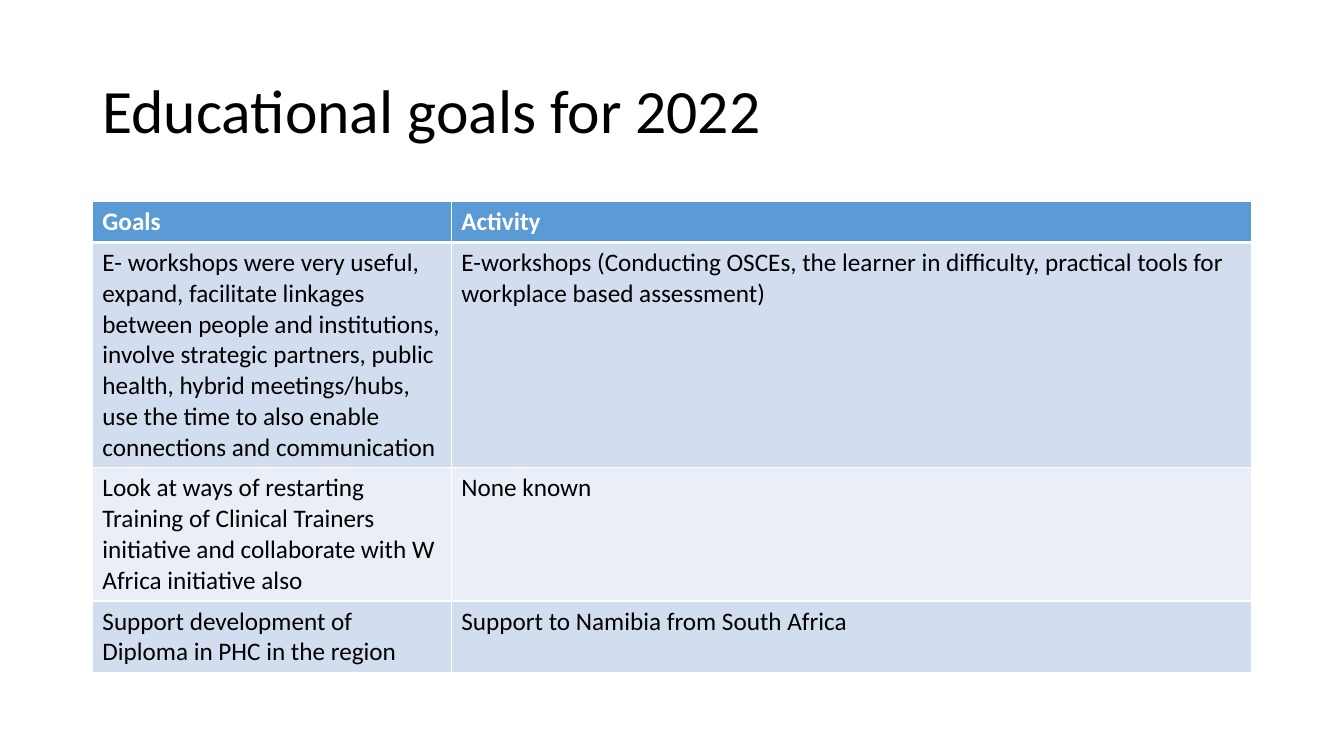
from lxml.etree import SubElement
from pptx import Presentation
from pptx.dml.color import RGBColor
from pptx.enum.text import MSO_ANCHOR, MSO_AUTO_SIZE, PP_ALIGN
from pptx.oxml.ns import qn
from pptx.util import Pt

FONT = "Calibri"
COLORS = {
    "text": "000000",
    "header_text": "FFFFFF",
    "header": "5B9BD5",
    "odd_row": "D2DEEF",
    "even_row": "EAEFF7",
    "border": "FFFFFF",
}
LEFT, WIDTH = 66, 828
COLUMN_WIDTHS = (256.4, 571.6)
ROW_HEIGHT = 29.2
GOALS = [
    ("Goals", "Activity"),
    ("E- workshops were very useful, expand, facilitate linkages between people "
     "and institutions, involve strategic partners, public health, hybrid "
     "meetings/hubs, use the time to also enable connections and communication",
     "E-workshops (Conducting OSCEs, the learner in difficulty, practical tools "
     "for workplace based assessment)"),
    ("Look at ways of restarting Training of Clinical Trainers initiative and "
     "collaborate with W Africa initiative also",
     "None known"),
    ("Support development of Diploma in PHC in the region",
     "Support to Namibia from South Africa"),
]


def write(frame, text, size=18, color="text", bold=False, line_spacing=None):
    paragraph = frame.paragraphs[0]
    paragraph.alignment = PP_ALIGN.LEFT
    paragraph.line_spacing = line_spacing
    run = paragraph.add_run()
    run.text = text
    run.font.name = FONT
    run.font.size = Pt(size)
    run.font.bold = bold
    run.font.color.rgb = RGBColor.from_string(COLORS[color])


def add_borders(cell, top=1, bottom=1):
    """Draw all four cell borders; must run before the cell gets its fill."""
    properties = cell._tc.get_or_add_tcPr()
    for side, width in (("L", 1), ("R", 1), ("T", top), ("B", bottom)):
        line = SubElement(properties, qn(f"a:ln{side}"), w=str(Pt(width)))
        solid = SubElement(line, qn("a:solidFill"))
        SubElement(solid, qn("a:srgbClr"), val=COLORS["border"])


def add_title(slide, text):
    title = slide.shapes.title
    title.left, title.top = Pt(LEFT), Pt(28.75)
    title.width, title.height = Pt(WIDTH), Pt(104.4)
    frame = title.text_frame
    frame.auto_size = MSO_AUTO_SIZE.NONE
    frame.vertical_anchor = MSO_ANCHOR.MIDDLE
    write(frame, text, size=44, line_spacing=0.9)


def add_goals_table(slide, rows):
    table = slide.shapes.add_table(
        len(rows), len(COLUMN_WIDTHS), Pt(LEFT), Pt(144),
        Pt(WIDTH), Pt(ROW_HEIGHT * len(rows))).table
    for column, width in zip(table.columns, COLUMN_WIDTHS):
        column.width = Pt(width)
    for r, entries in enumerate(rows):
        table.rows[r].height = Pt(ROW_HEIGHT)
        is_header = r == 0
        band = "header" if is_header else "odd_row" if r % 2 else "even_row"
        for c, entry in enumerate(entries):
            cell = table.cell(r, c)
            add_borders(cell, top=3 if r == 1 else 1, bottom=3 if is_header else 1)
            cell.fill.solid()
            cell.fill.fore_color.rgb = RGBColor.from_string(COLORS[band])
            write(cell.text_frame, entry, bold=is_header,
                  color="header_text" if is_header else "text")


def main():
    deck = Presentation()
    deck.slide_width, deck.slide_height = Pt(960), Pt(540)
    slide = deck.slides.add_slide(deck.slide_layouts.get_by_name("Title Only"))
    add_title(slide, "Educational goals for 2022")
    add_goals_table(slide, GOALS)
    deck.save("out.pptx")


if __name__ == "__main__":
    main()
